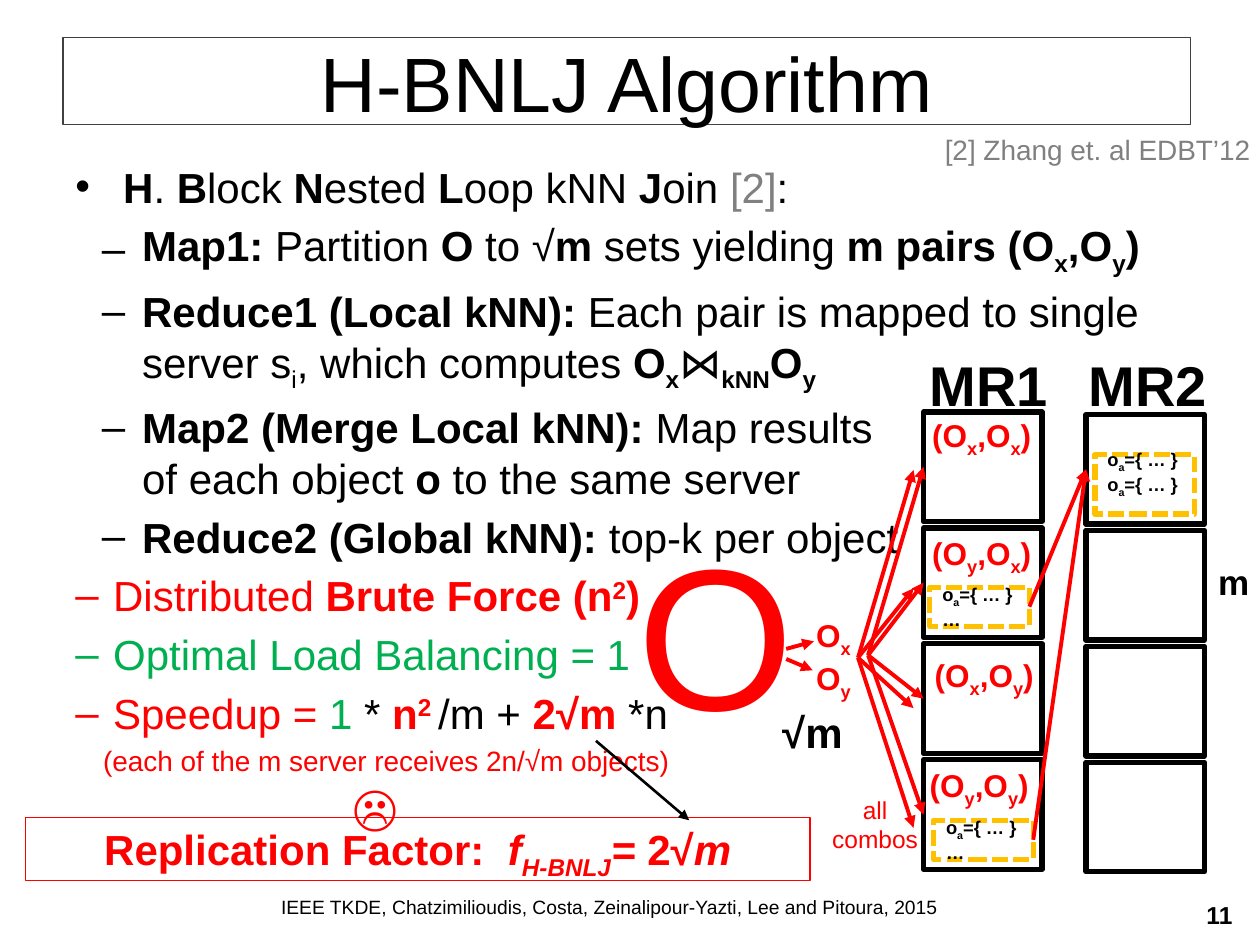
import pptx
import pptx.util
import pptx.dml.color
import pptx.enum.dml
import pptx.enum.shapes
import pptx.enum.text
import pptx.oxml.ns
import lxml.etree

Inches = pptx.util.Inches
Pt = pptx.util.Pt
RGBColor = pptx.dml.color.RGBColor
ALIGN = pptx.enum.text.PP_ALIGN
ANCHOR = pptx.enum.text.MSO_ANCHOR
qn = pptx.oxml.ns.qn

BLACK = RGBColor(0, 0, 0)
RED = RGBColor(255, 0, 0)
GREEN = RGBColor(0, 176, 80)
GRAY = RGBColor(128, 128, 128)
DARK = RGBColor(64, 64, 64)
AMBER = RGBColor(255, 192, 0)
COLOURS = {"k": BLACK, "r": RED, "g": GREEN, "y": GRAY}
BASELINES = {"_": "-25000", "^": "30000"}

TOP, SUB, POINT, NOTE, FACE = (
    (0.38, -0.38, "•", 24, 0), (0.53, -0.32, "–", 24, 4.8), (0.3, -0.3, "–", 24, 4.8),
    (0.22, 0, None, 16, 3.2), (2.2, 0, None, 28, 0))

BODY = [
    (TOP, [("H", "b"), (". ", ""), ("B", "b"), ("lock ", ""), ("N", "b"), ("ested ", ""),
           ("L", "b"), ("oop kNN ", ""), ("J", "b"), ("oin ", ""), ("[2]", "y"), (":", "")]),
    (SUB, [("Map1: ", "b"), ("Partition ", ""), ("O", "b"), (" to √", ""), ("m ", "b"),
           ("sets yielding ", ""), ("m pairs (O", "b"), ("x", "b_"), (",O", "b"),
           ("y", "b_"), (")", "b")]),
    (SUB, [("Reduce1 (Local kNN): ", "b"), ("Each pair is mapped to single server s", ""),
           ("i", "_"), (", which computes ", ""), ("O", "b"), ("x", "b_"), ("⋈", ""),
           ("kNN", "b_"), ("O", "b"), ("y", "b_")]),
    (SUB, [("Map2 (Merge Local kNN): ", "b"), ("Map results\nof each object", ""),
           (" o ", "b"), ("to the same server", "")]),
    (SUB, [("Reduce2 (Global kNN): ", "b"), ("top-k per object", "")]),
    (POINT, [("Distributed ", "r"), ("Brute Force (n", "rb"), ("2", "rb^"), (")", "rb")]),
    (POINT, [("Optimal Load Balancing = 1", "g")]),
    (POINT, [("Speedup = ", "r"), ("1 ", "g"), ("* ", ""), ("n", "rb"), ("2 ", "rb^"),
             ("/m + ", ""), ("2√m ", "rb"), ("*n", "")]),
    (NOTE, [("(each of the m server receives 2n/√m objects)", "r")]),
    (FACE, [("☹", "r")]),
]

OBJECT = [("o", "b"), ("a", "b_"), ("={ … }", "b")]
MORE = [("…", "b")]
PAIRS = [("x", "x", 7.3, 3.25), ("y", "x", 7.3, 4.19),
         ("x", "y", 7.32, 5.16), ("y", "y", 7.28, 6.03)]
LABELS = [
    ((7.4, 1, 2.8, 0.37), [[("[2] Zhang et. al EDBT’12", "y")]], 16, {}),
    ((7.28, 2.73, 1.81, 0.64), [[("MR1", "b")]], 32, {}),
    ((8.54, 2.73, 1.81, 0.64), [[("MR2", "b")]], 32, {}),
    ((4.96, 3.99, 1.46, 2.04), [[("O", "r")]], 115, {"wrap": False}),
    ((6.38, 4.84, 0.5, 0.71),
     [[("O", "rb"), ("x", "rb_")], [("O", "rb"), ("y", "rb_")]], 18, {}),
    ((6.5, 6.26, 0.89, 0.57), [[("all\ncombos", "r")]], 14,
     {"align": ALIGN.CENTER, "wrap": False}),
    ((6.11, 5.56, 0.78, 0.5), [[("√m", "b")]], 24, {"wrap": False}),
    ((9.57, 4.39, 0.39, 0.44), [[("m", "b")]], 20, {"anchor": ANCHOR.BOTTOM}),
    ((1.14, 7.06, 7.4, 0.29),
     [[("IEEE TKDE, Chatzimilioudis, Costa, Zeinalipour-Yazti, Lee and Pitoura, 2015", "")]],
     11, {"align": ALIGN.CENTER}),
    ((7.42, 7.09, 2.46, 0.4), [[("11", "b")]], 14, {"align": ALIGN.RIGHT}),
] + [((left, top, 1.1, 0.4),
      [[("(O", "rb"), (first, "rb_"), (",O", "rb"), (second, "rb_"), (")", "rb")]], 18, {})
     for first, second, left, top in PAIRS]
REPLICATION = [("Replication Factor:  ", "rb"), ("f", "rbi"), ("H-BNLJ", "rbi_"),
               ("= ", "rbi"), ("2√", "rb"), ("m", "rbi")]


def add_runs(paragraph, runs, size):
    for text, style in runs:
        for number, part in enumerate(text.split("\n")):
            if number:
                paragraph.add_line_break()
            run = paragraph.add_run()
            run.text = part
            run.font.name = "Arial"
            run.font.size = Pt(size)
            run.font.bold = "b" in style
            run.font.italic = "i" in style
            run.font.color.rgb = next((COLOURS[c] for c in style if c in COLOURS), BLACK)
            for mark in set(style) & set(BASELINES):
                run._r.get_or_add_rPr().set("baseline", BASELINES[mark])


def write(shape, lines, size, align=ALIGN.LEFT, wrap=True, anchor=ANCHOR.TOP):
    frame = shape.text_frame
    frame.word_wrap = wrap
    frame.vertical_anchor = anchor
    for number, runs in enumerate(lines):
        paragraph = frame.add_paragraph() if number else frame.paragraphs[0]
        paragraph.alignment = align
        add_runs(paragraph, runs, size)


def add_label(slide, place, lines, size, options):
    write(slide.shapes.add_textbox(*map(Inches, place)), lines, size, **options)


def add_box(slide, place, colour, width, dashed=False):
    box = slide.shapes.add_shape(pptx.enum.shapes.MSO_SHAPE.RECTANGLE, *map(Inches, place))
    box.shadow.inherit = False
    box.fill.background()
    box.line.color.rgb = colour
    box.line.width = Pt(width)
    if dashed:
        box.line.dash_style = pptx.enum.dml.MSO_LINE.SQUARE_DOT
    return box


def add_arrow(slide, start, end, colour=RED, width=2.25, source=None, target=None):
    arrow = slide.shapes.add_connector(
        pptx.enum.shapes.MSO_CONNECTOR.STRAIGHT, *map(Inches, start + end))
    arrow.line.color.rgb = colour
    arrow.line.width = Pt(width)
    lxml.etree.SubElement(arrow.line._get_or_add_ln(), qn("a:tailEnd"), type="triangle")
    lxml.etree.SubElement(arrow._element.spPr, qn("a:effectLst"))
    if source is not None:
        arrow.begin_connect(source, 3)
    if target is not None:
        arrow.end_connect(target, 1)


def add_body(slide):
    frame = slide.shapes.add_textbox(*map(Inches, (0.5, 1.23, 9.06, 5.55))).text_frame
    frame.word_wrap = True
    for number, ((margin, indent, bullet, size, gap), runs) in enumerate(BODY):
        paragraph = frame.add_paragraph() if number else frame.paragraphs[0]
        properties = paragraph._p.get_or_add_pPr()
        properties.set("marL", str(Inches(margin)))
        properties.set("indent", str(Inches(indent)))
        if bullet:
            lxml.etree.SubElement(properties, qn("a:buFont"), typeface="Arial")
            lxml.etree.SubElement(properties, qn("a:buChar"), char=bullet)
        if gap:
            paragraph.space_before = Pt(gap)
        add_runs(paragraph, runs, size)


def main():
    deck = pptx.Presentation()
    deck.slide_width, deck.slide_height = Inches(10), Inches(7.5)
    slide = deck.slides.add_slide(deck.slide_layouts[5])

    title = slide.shapes.title
    title.left, title.top, title.width, title.height = map(Inches, (0.5, 0.3, 8.95, 0.69))
    title.line.color.rgb = DARK
    title.line.width = Pt(0.75)
    write(title, [[("H-BNLJ Algorithm", "")]], 44, ALIGN.CENTER, anchor=ANCHOR.MIDDLE)
    add_body(slide)

    mappers = [add_box(slide, (7.33, 3.27 + 0.92 * row, 0.94, 0.87), BLACK, 3)
               for row in range(4)]
    reducers = [add_box(slide, (8.62, 3.29 + 0.92 * row, 0.94, 0.87), BLACK, 3)
                for row in range(4)]

    partials = []
    for left, top in ((7.38, 4.66), (7.41, 6.51)):
        partial = add_box(slide, (left, top, 0.79, 0.31), AMBER, 3, True)
        write(partial, [OBJECT, MORE], 10.5, wrap=False, anchor=ANCHOR.MIDDLE)
        partials.append(partial)
    merged = add_box(slide, (8.69, 3.61, 0.79, 0.47), AMBER, 3, True)
    write(merged, [OBJECT, OBJECT], 10.5, wrap=False, anchor=ANCHOR.MIDDLE)
    merged.text_frame.margin_bottom = Inches(0.22)

    for partial in partials:
        add_arrow(slide, (8.2, 6.66), (8.62, 3.72), source=partial, target=reducers[0])
    for place, lines, size, options in LABELS:
        add_label(slide, place, lines, size, options)

    add_arrow(slide, (6.24, 5.15), (6.46, 5.09))
    add_arrow(slide, (6.24, 5.23), (6.45, 5.32))
    for mapper, end in zip(mappers, (3.73, 4.67, 5.62, 6.57)):
        add_arrow(slide, (6.89, 5.2), (7.33, end), target=mapper)
        add_arrow(slide, (6.81, 5.22), (7.25, end))

    replication = add_box(slide, (0.2, 6.49, 6.23, 0.5), RED, 0.75)
    write(replication, [REPLICATION], 24, ALIGN.CENTER)
    add_arrow(slide, (4.73, 5.88), (5.47, 6.51), BLACK, 1.5)
    deck.save("out.pptx")


if __name__ == "__main__":
    main()
